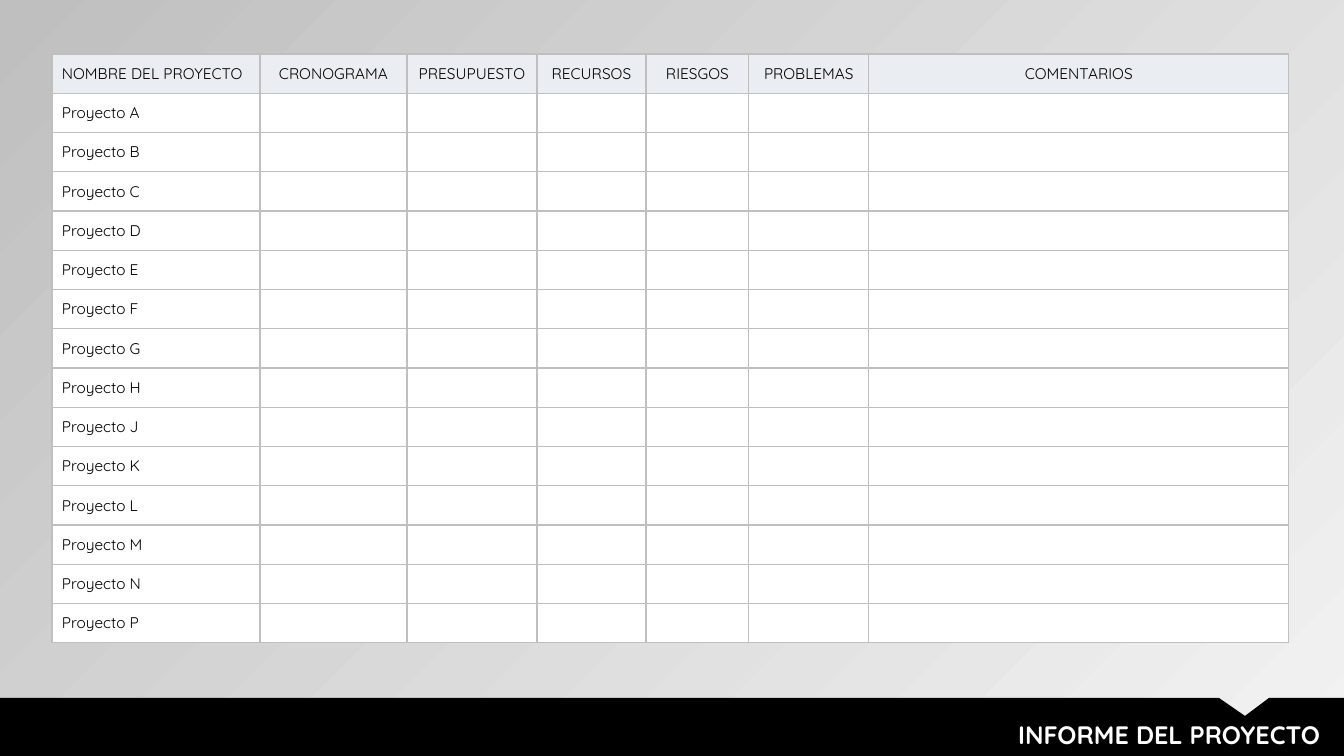
from lxml.etree import SubElement
from pptx import Presentation
from pptx.dml.color import RGBColor
from pptx.enum.text import MSO_ANCHOR, MSO_AUTO_SIZE, PP_ALIGN
from pptx.oxml.ns import qn
from pptx.util import Pt

WIDTH, HEIGHT = 1344, 756
EMU_PER_PX = 12192000 / WIDTH
FONT = "Quicksand"
COLORS = {
    "gradient_start": "F2F2F2",
    "gradient_end": "BFBFBF",
    "border": "BFBFBF",
    "header": "EAEEF3",
    "white": "FFFFFF",
    "black": "000000",
}
COLUMNS = {
    "NOMBRE DEL PROYECTO": 208,
    "CRONOGRAMA": 147,
    "PRESUPUESTO": 130,
    "RECURSOS": 109,
    "RIESGOS": 103,
    "PROBLEMAS": 120,
    "COMENTARIOS": 420,
}
PROJECTS = "ABCDEFGHJKLMNP"


def px(n):
    return round(n * EMU_PER_PX)


def rgb(name):
    return RGBColor.from_string(COLORS[name])


def style_text(p, size, color, align, bold=False):
    p.alignment = align
    p.font.name = FONT
    p.font.size = Pt(size)
    p.font.bold = bold
    p.font.color.rgb = rgb(color)


def set_background(s):
    fill = s.background.fill
    fill.gradient()
    fill.gradient_angle = 135
    for stop, color in zip(fill.gradient_stops, ("gradient_start", "gradient_end")):
        stop.color.rgb = rgb(color)


def add_borders(cell):
    tc_pr = cell._tc.get_or_add_tcPr()
    for side in ("lnL", "lnR", "lnT", "lnB"):
        ln = SubElement(tc_pr, qn(f"a:{side}"), w=str(Pt(1)))
        fill = SubElement(ln, qn("a:solidFill"))
        SubElement(fill, qn("a:srgbClr"), val=COLORS["border"])


def style_cell(cell, text, fill, align):
    add_borders(cell)
    cell.fill.solid()
    cell.fill.fore_color.rgb = rgb(fill)
    cell.vertical_anchor = MSO_ANCHOR.MIDDLE
    cell.margin_left = cell.margin_right = px(10)
    cell.margin_top = cell.margin_bottom = 0
    cell.text = text
    style_text(cell.text_frame.paragraphs[0], 11, "black", align)


def add_project_table(s, left, top, height):
    rows = [list(COLUMNS)]
    rows += [[f"Proyecto {letter}"] + [""] * (len(COLUMNS) - 1) for letter in PROJECTS]
    table = s.shapes.add_table(
        len(rows), len(COLUMNS), px(left), px(top), px(sum(COLUMNS.values())), px(height)
    ).table
    table.first_row = table.horz_banding = False
    for column, width in zip(table.columns, COLUMNS.values()):
        column.width = px(width)
    for i, texts in enumerate(rows):
        table.rows[i].height = px(height / len(rows))
        for j, text in enumerate(texts):
            style_cell(
                table.cell(i, j),
                text,
                "header" if i == 0 else "white",
                PP_ALIGN.CENTER if j else PP_ALIGN.LEFT,
            )


def add_polygon(s, points, color):
    builder = s.shapes.build_freeform(*points[0], scale=EMU_PER_PX)
    builder.add_line_segments(points[1:], close=True)
    sp = builder.convert_to_shape()
    sp.shadow.inherit = False
    sp.fill.solid()
    sp.fill.fore_color.rgb = rgb(color)
    sp.line.fill.background()


def add_title(s, text, left, top, width, height):
    tf = s.shapes.add_textbox(px(left), px(top), px(width), px(height)).text_frame
    tf.word_wrap = True
    tf.auto_size = MSO_AUTO_SIZE.SHAPE_TO_FIT_TEXT
    p = tf.paragraphs[0]
    p.text = text
    style_text(p, 18, "white", PP_ALIGN.RIGHT, bold=True)


def main():
    prs = Presentation()
    prs.slide_width, prs.slide_height = px(WIDTH), px(HEIGHT)
    s = prs.slides.add_slide(prs.slide_layouts[6])
    set_background(s)

    # Project status grid
    add_project_table(s, 52, 54, 589)

    # Footer band with a notch above the title
    band_top = 698
    add_polygon(
        s,
        [
            (0, band_top), (1219, band_top), (1245, 716), (1269, band_top),
            (WIDTH, band_top), (WIDTH, HEIGHT), (0, HEIGHT),
        ],
        "black",
    )
    add_title(s, "INFORME DEL PROYECTO", 417, 714, 913, 40)

    prs.save("out.pptx")


if __name__ == "__main__":
    main()
